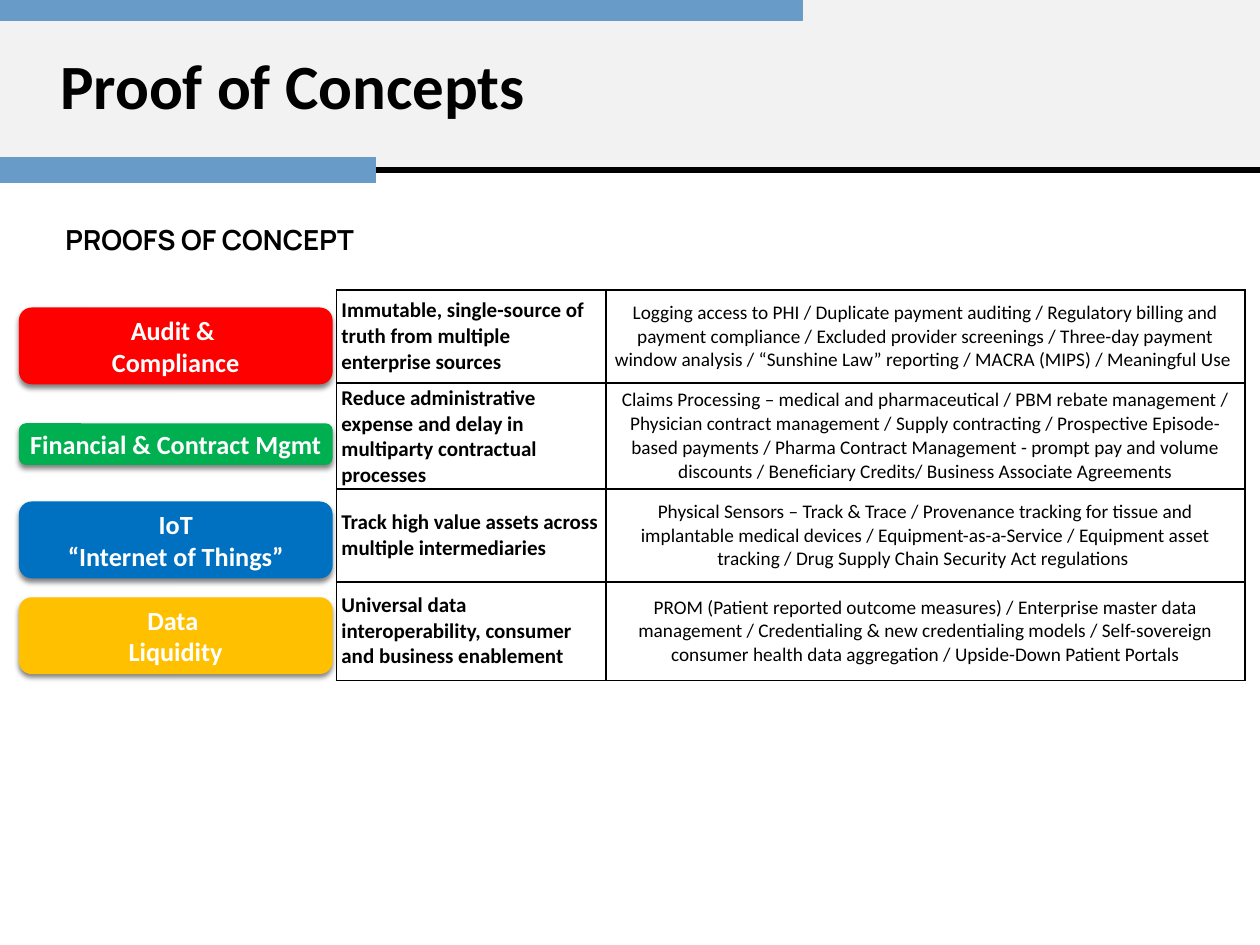
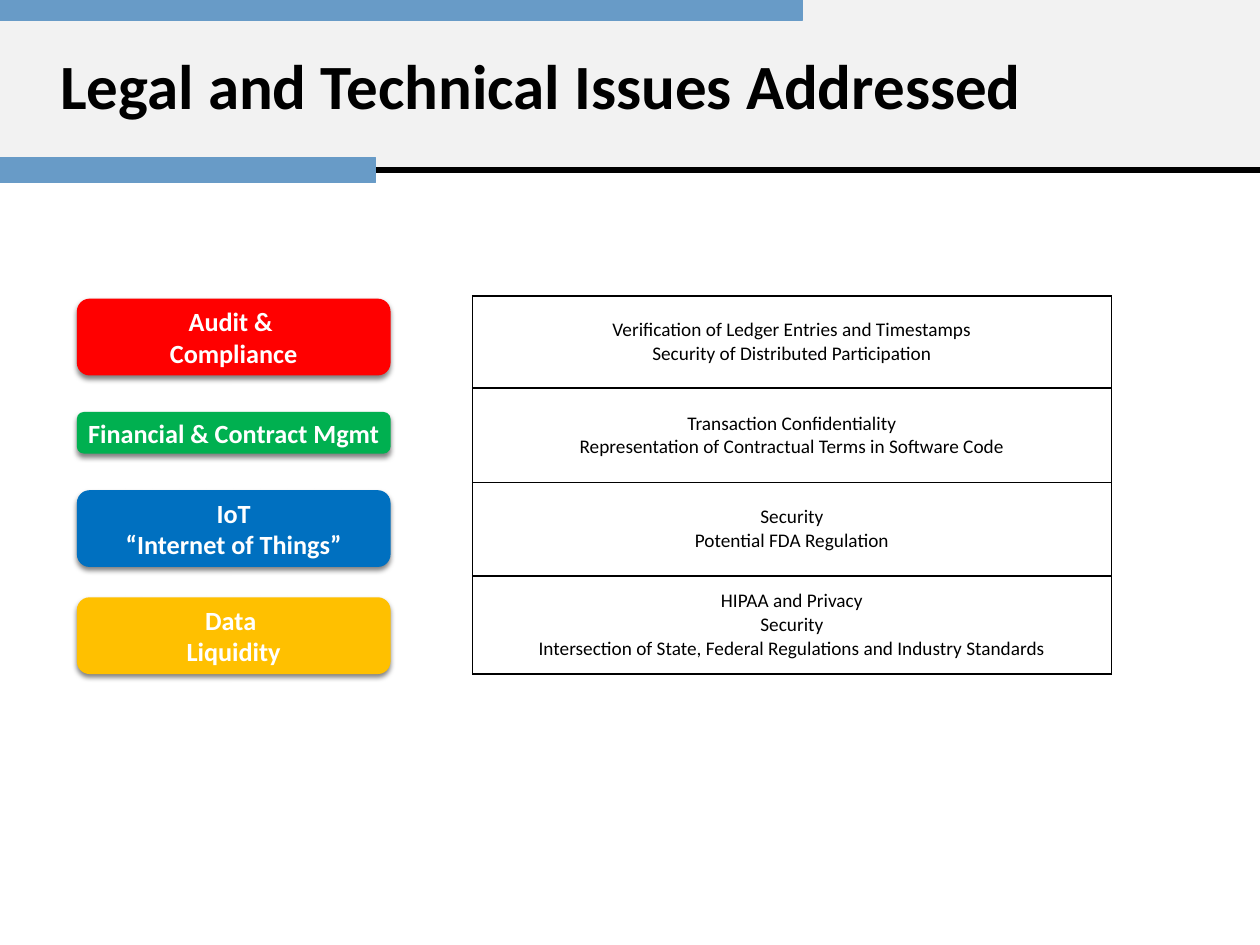
from lxml.etree import SubElement
from pptx import Presentation
from pptx.dml.color import RGBColor
from pptx.enum.shapes import MSO_CONNECTOR, MSO_SHAPE
from pptx.enum.text import MSO_ANCHOR, PP_ALIGN
from pptx.oxml import parse_xml
from pptx.oxml.ns import nsdecls, qn
from pptx.util import Inches, Pt

BLACK, WHITE, PALE, BLUE = "000000", "FFFFFF", "F2F2F2", "689BC7"
BODY_FONT, HEADING_FONT = "Calibri", "Manrope"
LABEL_HEIGHTS = {1: 0.33, 2: 0.61}  # by number of lines
DETAIL_WIDTH = 5.07

TOPICS = [
    (["Audit & ", "Compliance"], "FF0000"),
    (["Financial & Contract Mgmt"], "00B050"),
    (["IoT", "“Internet of Things”"], "0070C0"),
    (["Data ", "Liquidity"], "FFC000"),
]

CONCEPTS = [
    ("Immutable, single-source of truth from multiple enterprise sources",
     "Logging access to PHI / Duplicate payment auditing / Regulatory billing and "
     "payment compliance / Excluded provider screenings / Three-day payment window "
     "analysis / “Sunshine Law” reporting / MACRA (MIPS) / Meaningful Use "),
    ("Reduce administrative expense and delay in multiparty contractual processes",
     "Claims Processing – medical and pharmaceutical / PBM rebate management / "
     "Physician contract management / Supply contracting / Prospective Episode-based "
     "payments / Pharma Contract Management - prompt pay and volume discounts / "
     "Beneficiary Credits/ Business Associate Agreements"),
    ("Track high value assets across multiple intermediaries",
     "Physical Sensors – Track & Trace / Provenance tracking for tissue and "
     "implantable medical devices / Equipment-as-a-Service / Equipment asset "
     "tracking / Drug Supply Chain Security Act regulations "),
    ("Universal data interoperability, consumer and business enablement",
     "PROM (Patient reported outcome measures) / Enterprise master data management / "
     "Credentialing & new credentialing models / Self-sovereign consumer health data "
     "aggregation / Upside-Down Patient Portals"),
]

ISSUES = [
    ["Verification of Ledger Entries and Timestamps",
     "Security of Distributed Participation"],
    ["Transaction Confidentiality",
     "Representation of Contractual Terms in Software Code"],
    ["Security", "Potential FDA Regulation"],
    ["HIPAA and Privacy", "Security",
     "Intersection of State, Federal Regulations and Industry Standards"],
]


def rgb(color):
    return RGBColor.from_string(color)


class Deck:
    def __init__(self):
        self.prs = Presentation()
        self.prs.slide_width, self.prs.slide_height = Inches(10), Inches(7.5)
        self.slide = None

    def new_slide(self, title):
        self.slide = self.prs.slides.add_slide(self.prs.slide_layouts[6])
        # Header band, rule and accent bars
        self.band(0, 0, 10, 1.36, PALE)
        self.rule(2.84, 1.35, 10)
        self.band(0, 1.25, 2.98, 0.2, BLUE, outlined=True)
        self.band(0, -0.01, 6.37, 0.17, BLUE, outlined=True)
        self.text(0.38, 0.16, 9.32, 1.09, title, 36, spacing=0.9)

    def set_lines(self, frame, lines, size, bold=False, color=BLACK, font=BODY_FONT,
                  align=PP_ALIGN.LEFT, spacing=None):
        for i, line in enumerate(lines):
            paragraph = frame.paragraphs[0] if i == 0 else frame.add_paragraph()
            paragraph.text = line
            paragraph.alignment = align
            paragraph.line_spacing = spacing
            paragraph.font.name = font
            paragraph.font.size = Pt(size)
            paragraph.font.bold = bold
            paragraph.font.color.rgb = rgb(color)

    def inset(self, holder, across, down):
        holder.margin_left = holder.margin_right = Inches(across)
        holder.margin_top = holder.margin_bottom = Inches(down)

    def filled(self, preset, left, top, width, height, color):
        shape = self.slide.shapes.add_shape(
            preset, Inches(left), Inches(top), Inches(width), Inches(height))
        shape.shadow.inherit = False
        shape.fill.solid()
        shape.fill.fore_color.rgb = rgb(color)
        shape.line.fill.background()
        return shape

    def band(self, left, top, width, height, color, outlined=False):
        band = self.filled(MSO_SHAPE.RECTANGLE, left, top, width, height, color)
        if outlined:
            band.line.color.rgb = rgb(color)
            band.line.width = Pt(1)

    def rule(self, left, top, right):
        rule = self.slide.shapes.add_connector(
            MSO_CONNECTOR.STRAIGHT, Inches(left), Inches(top), Inches(right), Inches(top))
        rule.line.color.rgb = rgb(BLACK)
        rule.line.width = Pt(3)
        SubElement(rule._element.spPr, qn("a:effectLst"))

    def text(self, left, top, width, height, words, size, font=BODY_FONT,
             spacing=None, anchor=MSO_ANCHOR.MIDDLE, margins=(0.1, 0.05), wrap=True):
        frame = self.slide.shapes.add_textbox(
            Inches(left), Inches(top), Inches(width), Inches(height)).text_frame
        frame.word_wrap = wrap
        frame.vertical_anchor = anchor
        self.inset(frame, *margins)
        self.set_lines(frame, [words], size, bold=True, font=font, spacing=spacing)

    def label(self, left, top, lines, color):
        label = self.filled(MSO_SHAPE.ROUNDED_RECTANGLE, left, top, 2.49,
                            LABEL_HEIGHTS[len(lines)], color)
        label._element.spPr.find(qn("a:effectLst")).append(parse_xml(
            f'<a:outerShdw {nsdecls("a")} blurRad="{Pt(3)}" dist="{Pt(2)}" '
            f'dir="5400000" rotWithShape="0"><a:srgbClr val="{BLACK}">'
            '<a:alpha val="50000"/></a:srgbClr></a:outerShdw>'))
        frame = label.text_frame
        frame.word_wrap = True
        frame.vertical_anchor = MSO_ANCHOR.MIDDLE
        self.inset(frame, 0.02, 0.02)
        self.set_lines(frame, lines, 15, True, WHITE, align=PP_ALIGN.CENTER)

    def topics(self, left, tops):
        for top, (lines, color) in zip(tops, TOPICS):
            self.label(left, top, lines, color)

    def borders(self, cell):
        properties = cell._tc.get_or_add_tcPr()
        for side in ("lnL", "lnR", "lnT", "lnB"):
            properties.append(parse_xml(
                f'<a:{side} {nsdecls("a")} w="{Pt(1)}"><a:solidFill>'
                f'<a:srgbClr val="{BLACK}"/></a:solidFill></a:{side}>'))

    def table(self, left, top, widths, heights, rows):
        """Each row lists its cells as lines; the last column holds the details."""
        table = self.slide.shapes.add_table(
            len(rows), len(widths), Inches(left), Inches(top),
            Inches(sum(widths)), Inches(sum(heights))).table
        table.first_row = table.horz_banding = False
        for column, width in zip(table.columns, widths):
            column.width = Inches(width)
        for row, height, contents in zip(table.rows, heights, rows):
            row.height = Inches(height)
            for i, (cell, lines) in enumerate(zip(row.cells, contents)):
                self.borders(cell)
                cell.fill.background()
                cell.vertical_anchor = MSO_ANCHOR.MIDDLE
                self.inset(cell, 0.04, 0.02)
                if i == len(widths) - 1:
                    self.set_lines(cell.text_frame, lines, 11, align=PP_ALIGN.CENTER)
                else:
                    self.set_lines(cell.text_frame, lines, 12, bold=True)


def main():
    deck = Deck()

    # Proofs of concept: topic, benefit and use cases
    deck.new_slide("Proof of Concepts")
    deck.text(0.47, 1.72, 2.4, 0.37, "PROOFS OF CONCEPT", 15.8, HEADING_FONT,
              anchor=MSO_ANCHOR.TOP, margins=(0.05, 0.05), wrap=False)
    deck.topics(0.15, [2.44, 3.36, 3.98, 4.74])
    deck.table(2.67, 2.3, [2.14, DETAIL_WIDTH], [0.74, 0.84, 0.74, 0.78],
               [([benefit], [uses]) for benefit, uses in CONCEPTS])

    # Issues for each topic
    deck.new_slide("Legal and Technical Issues Addressed")
    deck.topics(0.61, [2.37, 3.27, 3.89, 4.74])
    deck.table(3.75, 2.35, [DETAIL_WIDTH], [0.73, 0.75, 0.74, 0.78],
               [[lines] for lines in ISSUES])

    deck.prs.save("out.pptx")


if __name__ == "__main__":
    main()
